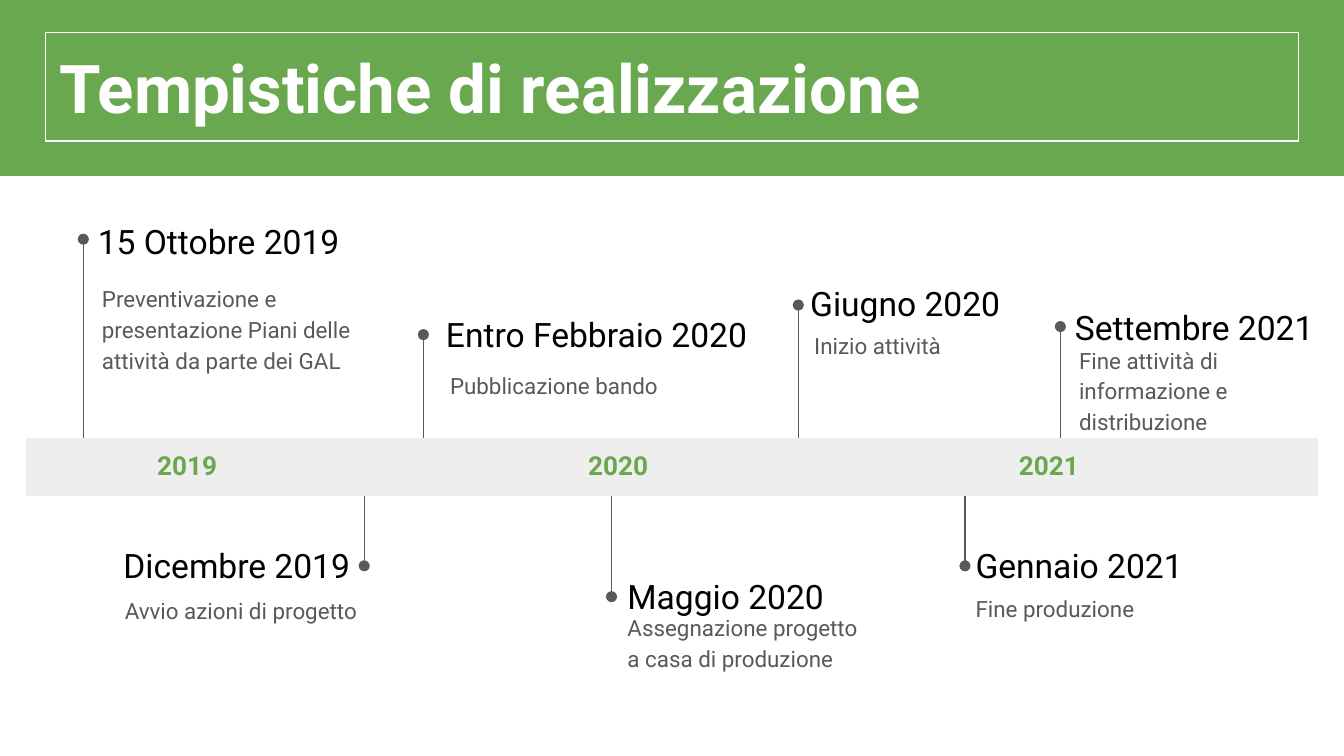
import pptx
import pptx.dml.color
import pptx.enum.shapes
import pptx.enum.text
import pptx.oxml
import pptx.oxml.ns
import pptx.util

RGB = pptx.dml.color.RGBColor
GREEN = RGB(0x6A, 0xA8, 0x4F)
GRAY = RGB(0x59, 0x59, 0x59)
PALE = RGB(0xEE, 0xEE, 0xEE)
BLACK = RGB(0, 0, 0)
WHITE = RGB(0xFF, 0xFF, 0xFF)

FONT = "Roboto"
PLAIN = "{2D5ABB26-0587-4C30-8999-92F81FD0307C}"  # table style without grid
ANCHOR = pptx.enum.text.MSO_ANCHOR
ALIGN = pptx.enum.text.PP_ALIGN

# The grid has 100 columns and 56.25 rows, so its cells are square
COLS, ROWS = 100, 56.25
BAR_TOP, BAR_LOW = 32.6, 36.9
NOTE_ROWS, DATE_ROWS = 6.3, 4.3

# Stem column, dot row, date (box), note (box); a box is left, top, width
EVENTS = [
    (6.2, 17.8, "15 Ottobre 2019", (6.3, 15.8, 20.6),
     "Preventivazione e presentazione Piani delle attività da parte dei GAL",
     (6.6, 19.9, 22.2)),
    (27.1, 42.1, "Dicembre 2019", (8.2, 39.9, 19.8),
     "Avvio azioni di progetto", (8.3, 43.1, 19.8)),
    (31.5, 24.9, "Entro Febbraio 2020", (32.2, 22.7, 24.7),
     "Pubblicazione bando", (32.5, 26.4, 19.8)),
    (45.5, 44.4, "Maggio 2020", (45.7, 42.2, 19.8),
     "Assegnazione progetto a casa di produzione", (45.7, 44.4, 19.8)),
    (59.4, 22.7, "Giugno 2020", (59.3, 20.4, 19.8),
     "Inizio attività", (59.6, 23.4, 19.8)),
    (71.8, 42.1, "Gennaio 2021", (71.6, 39.9, 19.8),
     "Fine produzione", (71.6, 43, 19.8)),
    (78.9, 24.3, "Settembre 2021", (79, 22.2, 19.8),
     "Fine attività di informazione e distribuzione", (79.3, 24.5, 19.8)),
]
YEARS = {1: "2019", 5: "2020", 9: "2021"}  # table column: year


class Deck:
    def __init__(self):
        self.prs = pptx.Presentation()
        self.prs.slide_width = pptx.util.Inches(10)
        self.prs.slide_height = pptx.util.Inches(5.625)
        self.slide = self.prs.slides.add_slide(self.prs.slide_layouts[5])
        self.shapes = self.slide.shapes

    def x(self, col):
        return round(self.prs.slide_width * col / COLS)

    def y(self, row):
        return round(self.prs.slide_height * row / ROWS)

    def box(self, left, top, width, height):
        return self.x(left), self.y(top), self.x(width), self.y(height)

    def label(self, frame, text, size, color, bold=False, align=ALIGN.LEFT):
        par = frame.paragraphs[0]
        par.text = text
        par.alignment = align
        font = par.font
        font.name, font.size, font.bold = FONT, pptx.util.Pt(size), bold
        font.color.rgb = color
        return par

    def fit(self, frame, anchor):
        frame.word_wrap = True
        frame.auto_size = pptx.enum.text.MSO_AUTO_SIZE.NONE
        frame.vertical_anchor = anchor
        pad = pptx.util.Inches(0.1)
        frame.margin_left = frame.margin_right = pad
        frame.margin_top = frame.margin_bottom = pad

    def title(self, text, *area):
        shape = self.shapes.title
        shape.left, shape.top, shape.width, shape.height = self.box(*area)
        shape.line.color.rgb = WHITE
        shape.line.width = pptx.util.Pt(0.75)
        self.fit(shape.text_frame, ANCHOR.MIDDLE)
        self.label(shape.text_frame, text, 36, WHITE, True)
        # Bring the title in front of the band
        self.shapes.element.append(shape.element)

    def band(self, *area):
        kind = pptx.enum.shapes.MSO_SHAPE.RECTANGLE
        shape = self.shapes.add_shape(kind, *self.box(*area))
        shape.shadow.inherit = False
        shape.fill.solid()
        shape.fill.fore_color.rgb = GREEN
        shape.line.fill.background()

    def text(self, text, area, size, color, anchor, space=None):
        frame = self.shapes.add_textbox(*self.box(*area)).text_frame
        self.fit(frame, anchor)
        self.label(frame, text, size, color).line_spacing = space

    def stem(self, col, start, end):
        kind = pptx.enum.shapes.MSO_CONNECTOR.STRAIGHT
        line = self.shapes.add_connector(
            kind, self.x(col), self.y(start), self.x(col), self.y(end))
        line.line.color.rgb = GRAY
        line.line.width = pptx.util.Pt(0.75)
        names = pptx.oxml.ns.nsdecls("a")
        make = pptx.oxml.parse_xml
        props = line.element.spPr
        edge = props.find(pptx.oxml.ns.qn("a:ln"))
        edge.append(make(f'<a:tailEnd {names} type="oval"/>'))
        props.append(make(f"<a:effectLst {names}/>"))

    def bar(self, years, count, *area):
        frame = self.shapes.add_table(1, count, *self.box(*area))
        table = frame.table
        style = next(frame.element.iter(pptx.oxml.ns.qn("a:tableStyleId")))
        style.text = PLAIN
        table.first_row = table.horz_banding = False
        for col, cell in enumerate(table.iter_cells()):
            cell.fill.solid()
            cell.fill.fore_color.rgb = PALE
            cell.vertical_anchor = ANCHOR.MIDDLE
            cell.margin_top = cell.margin_bottom = pptx.util.Inches(0.05)
            self.label(cell.text_frame, years.get(col, ""), 14, GREEN, True,
                       ALIGN.CENTER)

    def event(self, col, dot, date, spot, note, place):
        self.stem(col, BAR_TOP if dot < BAR_TOP else BAR_LOW, dot)
        self.text(date, (*spot, DATE_ROWS), 18, BLACK, ANCHOR.MIDDLE)
        self.text(note, (*place, NOTE_ROWS), 12, GRAY, ANCHOR.TOP, 1.15)


def main():
    deck = Deck()
    # Header
    deck.band(0, 0, COLS, 13.1)
    deck.title("Tempistiche di realizzazione", 3.4, 2.4, 93.2, 8.1)
    # Timeline
    deck.bar(YEARS, 12, 1.9, BAR_TOP, 96.2, BAR_LOW - BAR_TOP)
    for event in EVENTS:
        deck.event(*event)
    deck.prs.save("out.pptx")


if __name__ == "__main__":
    main()
